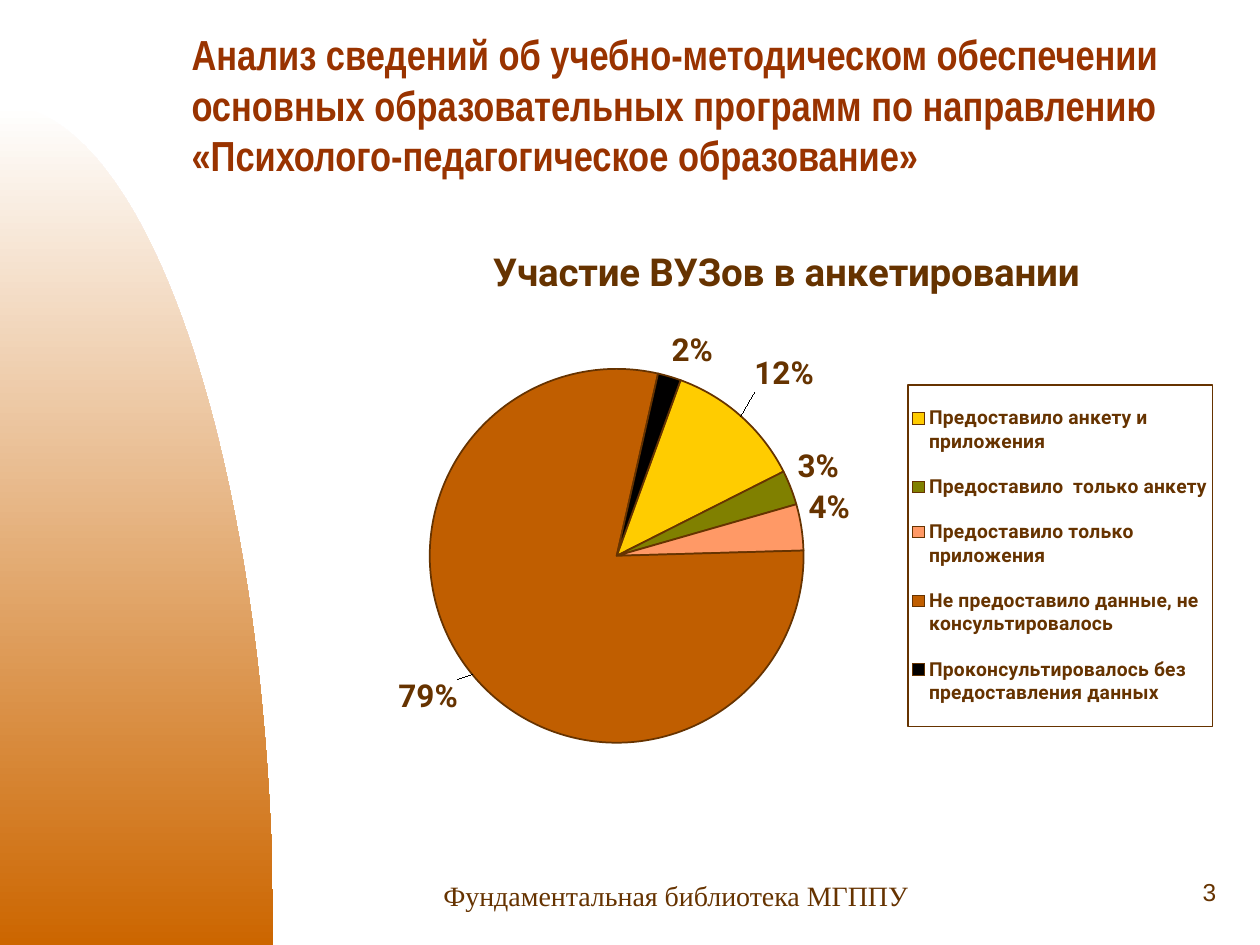
import pptx
import pptx.chart.data
import pptx.dml.color
import pptx.enum.chart
import pptx.enum.text
import pptx.oxml
import pptx.oxml.ns
import pptx.util
from dataclasses import dataclass

Inches = pptx.util.Inches
Pt = pptx.util.Pt


def rgb(value):
    return pptx.dml.color.RGBColor.from_string(value)


@dataclass(frozen=True)
class Theme:
    text: str = "663300"
    title: str = "993300"
    arc_top: str = "FFFFFF"
    arc_bottom: str = "CC6600"
    slices: tuple = ("FFCC00", "808000", "FF9966", "C05E00", "010000")
    title_font: str = "Arial Narrow"
    chart_font: str = "Roboto"
    number_font: str = "Arial"
    footer_font: str = "Times New Roman"
    title_size: int = 24
    chart_title_size: int = 22
    label_size: int = 18
    legend_size: int = 11
    number_size: int = 14
    footer_size: int = 16


class SlideBuilder:
    def __init__(self, prs, theme):
        self.theme = theme
        self.slide = prs.slides.add_slide(prs.slide_layouts[5])

    def style(self, font, size, name, color, bold=False):
        font.size, font.name, font.bold = Pt(size), name, bold
        font.color.rgb = rgb(color)

    def chart_style(self, font, size):
        self.style(font, size, self.theme.chart_font, self.theme.text, True)

    def put_text(self, tf, text, align, *style):
        p = tf.paragraphs[0]
        p.alignment = align
        r = p.add_run()
        r.text = text
        self.style(r.font, *style)

    def title(self, text, box):
        sp = self.slide.shapes.title
        sp.left, sp.top, sp.width, sp.height = (Inches(v) for v in box)
        tf = sp.text_frame
        tf.word_wrap = True
        tf.auto_size = pptx.enum.text.MSO_AUTO_SIZE.NONE
        tf.vertical_anchor = pptx.enum.text.MSO_ANCHOR.MIDDLE
        t = self.theme
        self.put_text(tf, text, pptx.enum.text.PP_ALIGN.LEFT,
                      t.title_size, t.title_font, t.title, True)

    def text(self, text, box, size, font, align, anchor):
        sp = self.slide.shapes.add_textbox(*(Inches(v) for v in box))
        tf = sp.text_frame
        tf.word_wrap = True
        tf.vertical_anchor = anchor
        self.put_text(tf, text, align, size, font, self.theme.text)

    def arc(self, start, control1, control2, end, steps=80):
        """Fill the area under a cubic curve, down to the slide's corner."""
        def point(t):
            weights = ((1 - t) ** 3, 3 * t * (1 - t) ** 2, 3 * t * t * (1 - t), t ** 3)
            curve = (start, control1, control2, end)
            return tuple(Inches(sum(w * c[axis] for w, c in zip(weights, curve)))
                         for axis in (0, 1))

        fb = self.slide.shapes.build_freeform(*point(0), scale=1.0)
        points = [point(i / steps) for i in range(1, steps + 1)]
        fb.add_line_segments(points + [(Inches(start[0]), Inches(end[1]))], close=True)
        sp = fb.convert_to_shape()
        sp.shadow.inherit = False
        sp.line.fill.background()
        sp.fill.gradient()
        sp.fill.gradient_angle = 270
        for stop, color in zip(sp.fill.gradient_stops,
                               (self.theme.arc_top, self.theme.arc_bottom)):
            stop.color.rgb = rgb(color)

    def layout(self, target="", **values):
        """Make a manual layout element for a part of the chart."""
        parts = f'<c:layoutTarget val="{target}"/>' if target else ""
        if "w" in values:
            parts += '<c:xMode val="edge"/><c:yMode val="edge"/>'
        parts += "".join(f'<c:{k} val="{v}"/>' for k, v in values.items())
        return pptx.oxml.parse_xml(
            f'<c:layout {pptx.oxml.ns.nsdecls("c")}>'
            f'<c:manualLayout>{parts}</c:manualLayout></c:layout>')

    def pie(self, title, data, box, label_offsets):
        t = self.theme
        cd = pptx.chart.data.CategoryChartData(number_format="0%")
        cd.categories = list(data)
        cd.add_series("Series 1", list(data.values()))
        chart = self.slide.shapes.add_chart(
            pptx.enum.chart.XL_CHART_TYPE.PIE, *(Inches(v) for v in box), cd).chart
        self.chart_style(chart.font, t.label_size)

        # Chart title
        tf = chart.chart_title.text_frame
        self.put_text(tf, title, pptx.enum.text.PP_ALIGN.CENTER,
                      t.chart_title_size, t.chart_font, t.text, True)

        # Legend with a frame
        chart.has_legend = True
        legend = chart.legend
        legend.position = pptx.enum.chart.XL_LEGEND_POSITION.RIGHT
        legend.include_in_layout = False
        self.chart_style(legend.font, t.legend_size)
        xml = legend._element
        for old in xml.findall(pptx.oxml.ns.qn("c:layout")):
            xml.remove(old)
        xml.find(pptx.oxml.ns.qn("c:legendPos")).addnext(
            self.layout(x=0.64, y=0.27, w=0.35, h=0.56))
        xml.find(pptx.oxml.ns.qn("c:overlay")).addnext(pptx.oxml.parse_xml(
            f'<c:spPr {pptx.oxml.ns.nsdecls("c", "a")}><a:ln w="9525"><a:solidFill>'
            f'<a:srgbClr val="{t.text}"/></a:solidFill></a:ln></c:spPr>'))

        # Plot area and first slice angle
        area = chart._chartSpace.chart.plotArea
        for old in area.findall(pptx.oxml.ns.qn("c:layout")):
            area.remove(old)
        area.insert(0, self.layout("inner", x=0.09, y=0.24, w=0.43, h=0.62))
        plot = chart.plots[0]
        plot.vary_by_categories = True
        pie = plot._element
        for old in pie.findall(pptx.oxml.ns.qn("c:firstSliceAng")):
            pie.remove(old)
        pie.append(pptx.oxml.parse_xml(
            f'<c:firstSliceAng {pptx.oxml.ns.nsdecls("c")} val="20"/>'))

        # Slices
        series = plot.series[0]
        for i, color in enumerate(t.slices):
            fmt = series.points[i].format
            fmt.fill.solid()
            fmt.fill.fore_color.rgb = rgb(color)
            fmt.line.color.rgb = rgb(t.text)
            fmt.line.width = Pt(1)

        # Value labels, some moved away from their slice
        outside = pptx.enum.chart.XL_LABEL_POSITION.OUTSIDE_END
        labels = series.data_labels
        labels.show_value = True
        labels.number_format, labels.number_format_is_linked = "0%", False
        labels.position = outside
        self.chart_style(labels.font, t.label_size)
        for i, (dx, dy) in label_offsets.items():
            label = series.points[i].data_label
            self.chart_style(label.font, t.label_size)
            label.position = outside
            item = labels._element.xpath(f'c:dLbl[c:idx/@val="{i}"]')[0]
            item.insert(1, self.layout(x=dx, y=dy))


def main():
    prs = pptx.Presentation()
    prs.slide_width, prs.slide_height = Inches(10), Inches(7.5)
    theme = Theme()
    s = SlideBuilder(prs, theme)
    align, anchor = pptx.enum.text.PP_ALIGN, pptx.enum.text.MSO_ANCHOR

    # Side decoration
    s.arc((0, 0.83), (1.2, 0.83), (2.17, 3.82), (2.17, 7.5))

    # Heading and chart
    s.title("Анализ сведений об учебно-методическом обеспечении основных "
            "образовательных программ по направлению "
            "«Психолого-педагогическое образование»", (1.42, 0.33, 8.58, 1))
    s.pie("Участие ВУЗов в анкетировании", {
        "Предоставило анкету и приложения": 0.12,
        "Предоставило  только анкету": 0.03,
        "Предоставило только приложения": 0.04,
        "Не предоставило данные, не консультировалось": 0.79,
        "Проконсультировалось без предоставления данных": 0.02,
    }, (2.79, 1.75, 6.9, 4.84), {0: (0.01, -0.03), 3: (-0.01, 0)})

    # Footer and slide number
    s.text("Фундаментальная библиотека МГППУ", (3.42, 6.92, 4.25, 0.33),
           theme.footer_size, theme.footer_font, align.LEFT, anchor.TOP)
    s.text("3", (7.67, 6.83, 2.08, 0.5),
           theme.number_size, theme.number_font, align.RIGHT, anchor.MIDDLE)

    prs.save("out.pptx")


if __name__ == "__main__":
    main()
